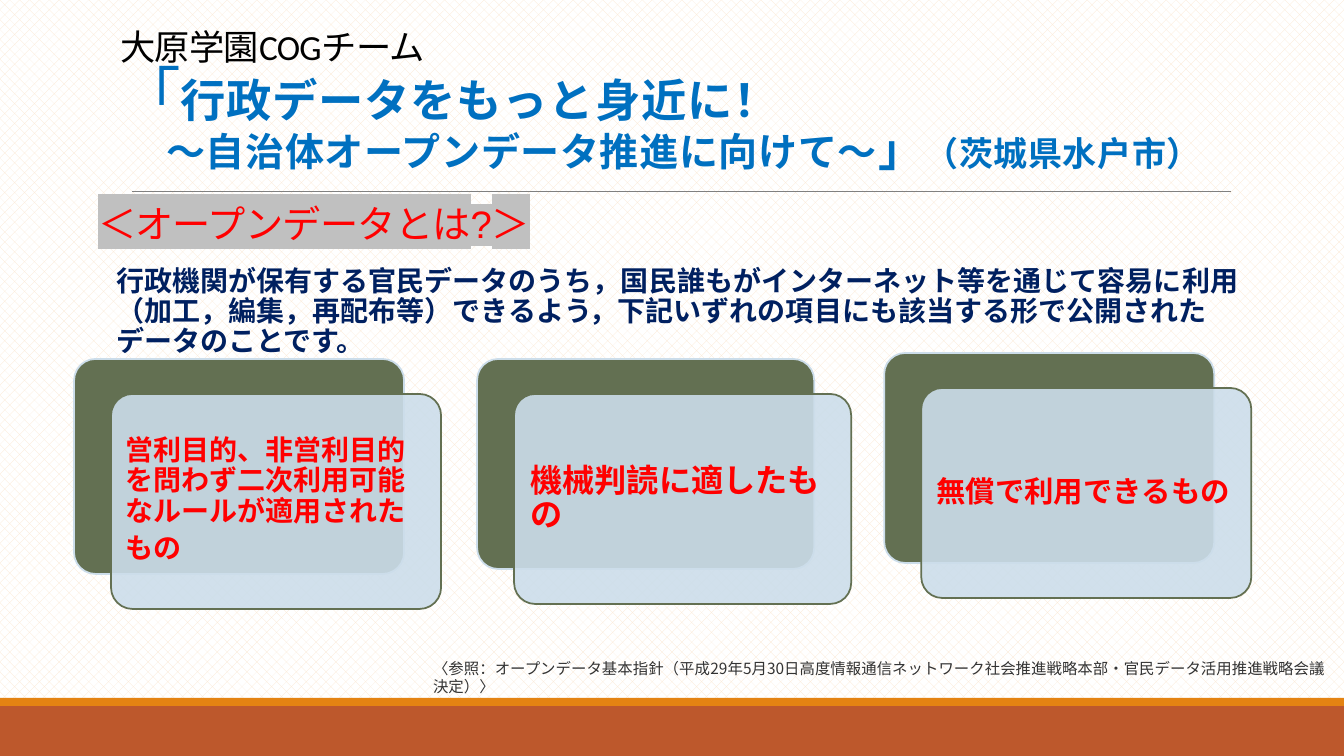
from copy import deepcopy
from dataclasses import dataclass

from lxml.etree import SubElement
from pptx import Presentation
from pptx.dml.color import RGBColor
from pptx.enum.dml import MSO_PATTERN
from pptx.enum.shapes import MSO_CONNECTOR, MSO_SHAPE as SHAPE
from pptx.enum.text import MSO_ANCHOR as ANCHOR, MSO_AUTO_SIZE as AUTO, PP_ALIGN
from pptx.oxml.ns import qn
from pptx.util import Emu, Inches, Pt


@dataclass(frozen=True)
class Theme:
    latin: str = "Calibri"
    sans: str = "Arial"
    asian: str = "Noto Sans CJK JP"
    black: str = "000000"
    blue: str = "0070C0"
    navy: str = "002060"
    red: str = "FF0000"
    ink: str = "333333"
    gray: str = "808080"
    mark: str = "C0C0C0"
    olive: str = "637052"
    pale: str = "CCDDEA"
    rust: str = "BD582C"
    amber: str = "E48312"
    cream: str = "FBE6CE"
    white: str = "FFFFFF"
    team: float = 25.2
    quote: float = 43.2
    main: float = 32.4
    sub: float = 27.9
    place: float = 24.3
    head: float = 27.3
    body: float = 20
    note: float = 11


T = Theme()


def style(size, color, face=T.latin, bold=False, space=0, mark=None):
    return dict(size=size, color=color, face=face, bold=bold, space=space, mark=mark)


def blue(size, bold=True, space=50):
    return style(size, T.blue, T.sans, bold, space)


TITLE = [
    [("大原学園COGチーム", style(T.team, T.black, space=-50))],
    [("「", blue(T.quote, False, -50)), ("行政データをもっと身近に！", blue(T.main))],
    [("\u3000".replace("\u3000", "　"), blue(T.main)),
     ("～自治体オープンデータ推進に向けて～", blue(T.sub)),
     ("」", blue(T.main)), ("（茨城県水戸市）", blue(T.place))],
]
TITLE[2][0] = ("　", blue(T.main))
HEAD = [[("＜オープンデータとは?＞", style(T.head, T.red, T.sans, space=-50, mark=T.mark))]]
BODY = [[("行政機関が保有する官民データのうち，国民誰もがインターネット等を通じて容易に利用"
          "（加工，編集，再配布等）できるよう，下記いずれの項目にも該当する形で公開された"
          "データのことです。", style(T.body, T.navy, bold=True))]]
NOTE = [[("〈参照：オープンデータ基本指針（平成29年5月30日高度情報通信ネットワーク社会推進戦略本部・"
          "官民データ活用推進戦略会議決定）〉", style(T.note, T.ink, T.asian))]]
CARDS = [
    ((74, 359, 330, 215), 8,
     [("営利目的、非営利目的を問わず二次利用可能なルールが適用されたもの",
       style(20, T.red, bold=True)), ("　", style(26, T.navy, bold=True))]),
    ((477, 359, 337, 210), 10, [("機械判読に適したもの", style(23, T.red, bold=True))]),
    ((884, 353, 330, 210), 9, [("無償で利用できるもの", style(21, T.red, bold=True))]),
]
BARS = [((0, 706, 1344, 50), T.rust), ((0, 698, 1344, 8), T.amber)]
SHIFT = (37, 35)


def px(n):
    return Emu(round(n * 914400 / 100.8))


def rgb(code):
    return RGBColor.from_string(code)


def put(shape, box):
    shape.left, shape.top, shape.width, shape.height = map(px, box)
    return shape


def paint(font, look):
    font.size, font.bold, font.name = Pt(look["size"]), look["bold"], look["face"]
    font.color.rgb = rgb(look["color"])
    props = font._element if hasattr(font, "_element") else font._rPr
    props.set("spc", str(look["space"]))
    asian = props.makeelement(qn("a:ea"), {"typeface": T.asian})
    props.find(qn("a:latin")).addnext(asian)
    if look["mark"]:
        mark = props.makeelement(qn("a:highlight"), {})
        SubElement(mark, qn("a:srgbClr"), val=look["mark"])
        props.find(qn("a:solidFill")).addnext(mark)
    return props


def write(shape, lines, anchor, pad=(10, 5), lead=1.0):
    frame = shape.text_frame
    frame.word_wrap, frame.auto_size = True, AUTO.NONE
    frame.vertical_anchor = anchor
    frame.margin_left = frame.margin_right = px(pad[0])
    frame.margin_top = frame.margin_bottom = px(pad[1])
    para = frame.paragraphs[0]
    para.alignment, para.line_spacing = PP_ALIGN.LEFT, lead
    para.space_before = para.space_after = Pt(0)
    looks = [look for line in lines for _, look in line]
    alone = len(looks) == 1 and not looks[0]["mark"]
    if alone:
        paint(para.font, looks[0])
    props = None
    for row, line in enumerate(lines):
        if row:
            para.add_line_break()
            para._p.findall(qn("a:br"))[-1].append(deepcopy(props))
        for text, look in line:
            run = para.add_run()
            run.text = text
            if not alone:
                props = paint(run.font, look)


def block(slide, kind, box, fill, line=None):
    shape = put(slide.shapes.add_shape(kind, 0, 0, 0, 0), box)
    shape.shadow.inherit = False
    shape.fill.solid()
    shape.fill.fore_color.rgb = rgb(fill)
    if line:
        shape.line.color.rgb, shape.line.width = rgb(line), Pt(1.25)
        shape.adjustments[0] = 0.1
    else:
        shape.line.fill.background()
    return shape


def card(slide, box, pad, runs):
    left, top, wide, high = box
    block(slide, SHAPE.ROUNDED_RECTANGLE, box, T.olive, T.pale)
    front = block(slide, SHAPE.ROUNDED_RECTANGLE,
                  (left + SHIFT[0], top + SHIFT[1], wide, high), T.pale, T.olive)
    tint = front._element.spPr.find(qn("a:solidFill")).find(qn("a:srgbClr"))
    SubElement(tint, qn("a:alpha"), val="90000")
    write(front, [runs], ANCHOR.MIDDLE, (pad, pad), 0.9)


def label(slide, box, lines, anchor, lead=1.0):
    shape = slide.shapes.add_textbox(*map(px, box))
    write(shape, lines, anchor, lead=lead)


def main():
    deck = Presentation()
    deck.slide_width, deck.slide_height = Inches(13.33), Inches(7.5)
    slide = deck.slides.add_slide(deck.slide_layouts[1])
    back = slide.background.fill
    back.patterned()
    back.pattern = MSO_PATTERN.PERCENT_30
    back.fore_color.rgb, back.back_color.rgb = rgb(T.cream), rgb(T.white)

    for box, color in BARS:
        block(slide, SHAPE.RECTANGLE, box, color)
    rule = slide.shapes.add_connector(MSO_CONNECTOR.STRAIGHT, px(132), px(191), px(1231), px(191))
    rule.line.color.rgb, rule.line.width = rgb(T.gray), Pt(0.5)
    SubElement(rule._element.spPr, qn("a:effectLst"))

    title, body = slide.placeholders
    write(put(title, (110, 21, 1109, 160)), TITLE, ANCHOR.BOTTOM, lead=0.85)
    for item in CARDS:
        card(slide, *item)
    label(slide, (88, 91, 1109, 160), HEAD, ANCHOR.BOTTOM, 0.85)
    props = body.text_frame.paragraphs[0]._p.get_or_add_pPr()
    props.set("marL", str(px(10)))
    props.set("indent", "0")
    SubElement(props, qn("a:buNone"))
    write(put(body, (106, 262, 1145, 74)), BODY, ANCHOR.TOP, (0, 5), 0.9)
    label(slide, (423, 654, 921, 29), NOTE, ANCHOR.TOP)
    deck.save("out.pptx")


if __name__ == "__main__":
    main()
